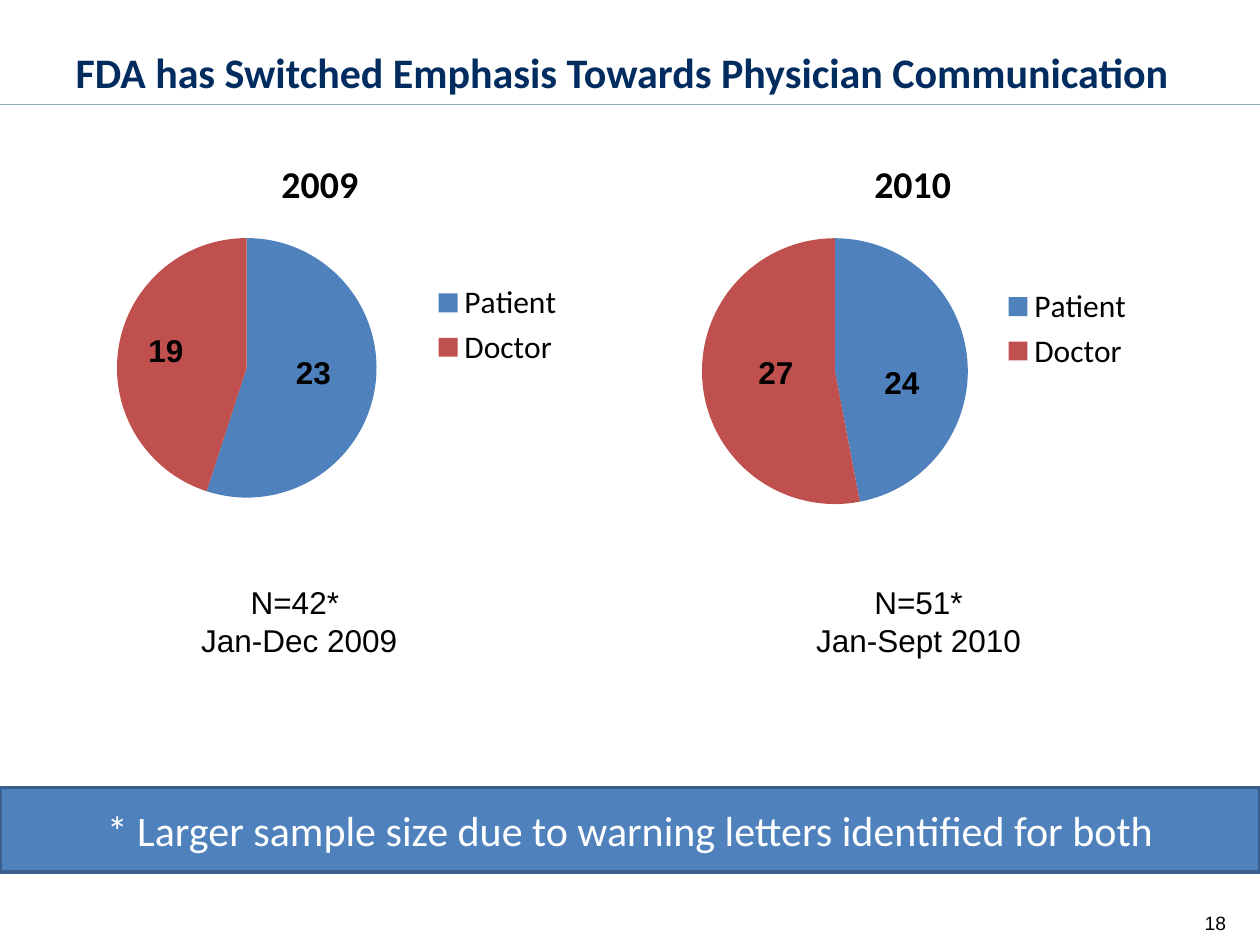
from lxml import etree
from pptx import Presentation
from pptx import util as u
from pptx.chart.data import CategoryChartData
from pptx.dml.color import RGBColor
from pptx.enum import chart as ch, shapes, text
from pptx.oxml import parse_xml
from pptx.oxml.ns import nsdecls, qn

Inches, Pt = u.Inches, u.Pt
COLORS = {"navy": "002C5F", "teal": "83AFB4", "blue": "4F81BD", "red": "C0504D",
          "edge": "3A5F8C", "black": "000000", "white": "FFFFFF"}


def style(font, size, color="black", name="Arial", bold=False):
    font.size, font.name, font.bold = Pt(size), name, bold
    font.color.rgb = RGBColor.from_string(COLORS[color])


def add_text(s, box, lines, size, align, bold=False):
    tf = s.shapes.add_textbox(*map(Inches, box)).text_frame
    tf.word_wrap = False
    for i, line in enumerate(lines):
        p = tf.paragraphs[0] if i == 0 else tf.add_paragraph()
        p.alignment = align
        r = p.add_run()
        r.text = line
        style(r.font, size, bold=bold)


prs = Presentation()
prs.slide_width, prs.slide_height = Inches(10), Inches(7.5)
s = prs.slides.add_slide(prs.slide_layouts[5])

# Title and rule
title = s.shapes.title
title.left, title.top, title.width, title.height = map(Inches, (0.5, 0.3, 9, 0.53))
tf = title.text_frame
tf.vertical_anchor = text.MSO_ANCHOR.MIDDLE
p = tf.paragraphs[0]
p.alignment = text.PP_ALIGN.LEFT
r = p.add_run()
r.text = "FDA has Switched Emphasis Towards Physician Communication"
style(r.font, 24, "navy", "Calibri", True)

rule = s.shapes.add_connector(shapes.MSO_CONNECTOR.STRAIGHT, 0, Inches(0.83),
                              prs.slide_width, Inches(0.83))
rule.line.color.rgb = RGBColor.from_string(COLORS["teal"])
rule.line.width = Pt(1)
etree.SubElement(rule._element.spPr, qn("a:effectLst"))

# Pies: year, chart box, pie (left, top, diameter), categories, percentages,
# counts with their positions, caption with its box
pies = [
    ("2009", (0.5, 1.08, 4.08, 3), (0.93, 1.89, 2.06), ("Patient", "Doctor"), (55, 45),
     (("23", 2.25, 2.75), ("19", 1.08, 2.58)),
     ("N=42* ", "Jan-Dec 2009"), (1.49, 4.58, 1.77, 0.71)),
    ("2010", (5.33, 1.08, 3.83, 3.06), (5.57, 1.89, 2.11), ("Patient ", "Doctor"), (47, 53),
     (("24", 6.92, 2.83), ("27", 5.92, 2.75)),
     ("N=51*", "Jan-Sept 2010"), (6.37, 4.58, 1.84, 0.71)),
]
for year, box, (px, py, d), cats, values, counts, caption, caption_box in pies:
    data = CategoryChartData()
    data.categories = cats
    data.add_series(year, values)
    chart = s.shapes.add_chart(ch.XL_CHART_TYPE.PIE, *map(Inches, box), data).chart
    style(chart.font, 18, name="Calibri")
    chart.has_title = True
    r = chart.chart_title.text_frame.paragraphs[0].add_run()
    r.text = year
    style(r.font, 21.6, name="Calibri", bold=True)
    chart.has_legend = True
    chart.legend.position = ch.XL_LEGEND_POSITION.RIGHT
    chart.legend.include_in_layout = False
    plot = chart.plots[0]
    plot.vary_by_categories = True
    for i, color in enumerate(("blue", "red")):
        fill = plot.series[0].points[i].format.fill
        fill.solid()
        fill.fore_color.rgb = RGBColor.from_string(COLORS[color])

    # Fixed plot area, as fractions of the chart box
    x, y, w, h = box
    parts = {"x": (px - x) / w, "y": (py - y) / h, "w": d / w, "h": d / h}
    area = chart._chartSpace.chart.plotArea
    for old in area.findall(qn("c:layout")):
        area.remove(old)
    area.insert(0, parse_xml(
        f'<c:layout {nsdecls("c")}><c:manualLayout><c:layoutTarget val="inner"/>'
        '<c:xMode val="edge"/><c:yMode val="edge"/>'
        + "".join(f'<c:{k} val="{v:.3f}"/>' for k, v in parts.items())
        + "</c:manualLayout></c:layout>"))

    for count, left, top in counts:
        add_text(s, (left, top, 0.48, 0.4), [count], 18, text.PP_ALIGN.LEFT, True)
    add_text(s, caption_box, caption, 18, text.PP_ALIGN.CENTER)

# Footnote banner
sp = s.shapes.add_shape(shapes.MSO_SHAPE.RECTANGLE, 0, Inches(6.25),
                        prs.slide_width, Inches(0.67))
sp.shadow.inherit = False
sp.fill.solid()
sp.fill.fore_color.rgb = RGBColor.from_string(COLORS["blue"])
sp.line.color.rgb = RGBColor.from_string(COLORS["edge"])
sp.line.width = Pt(2)
tf = sp.text_frame
tf.vertical_anchor = text.MSO_ANCHOR.MIDDLE
p = tf.paragraphs[0]
p.alignment = text.PP_ALIGN.CENTER
r = p.add_run()
r.text = "* Larger sample size due to warning letters identified for both"
style(r.font, 24, "white", "Calibri")

# Page number
add_text(s, (7.5, 7.18, 2.33, 0.3), ["18"], 11, text.PP_ALIGN.RIGHT)

prs.save("out.pptx")
